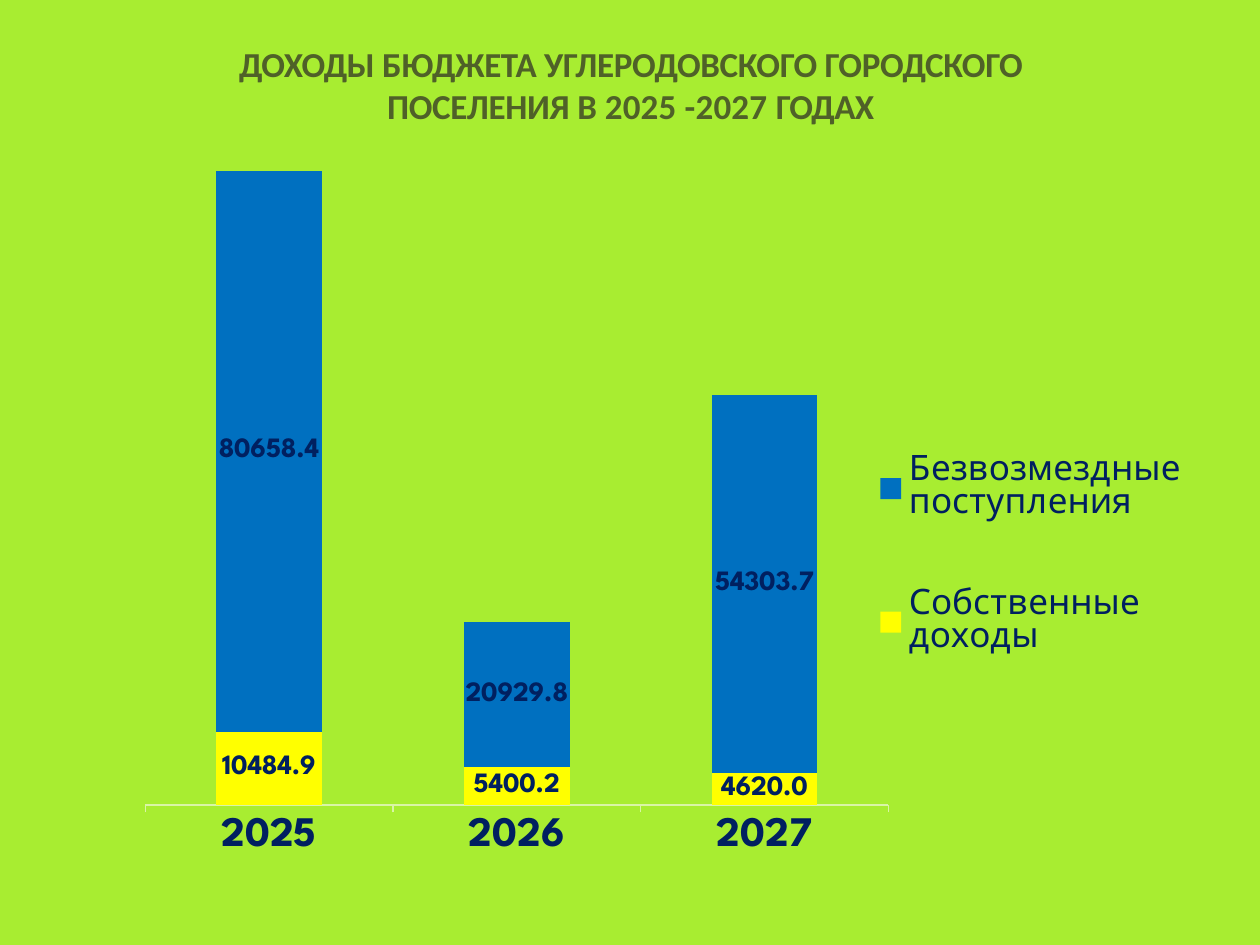
from lxml import etree
from pptx import Presentation
from pptx.chart.data import CategoryChartData
from pptx.dml.color import RGBColor
from pptx.enum.chart import XL_CHART_TYPE, XL_LEGEND_POSITION, XL_TICK_LABEL_POSITION, XL_TICK_MARK
from pptx.enum.shapes import MSO_SHAPE
from pptx.enum.text import MSO_AUTO_SIZE, PP_ALIGN
from pptx.oxml.ns import qn
from pptx.util import Inches, Pt

COLORS = {
    "back": "A8ED31",
    "title": "4F6128",
    "navy": "002060",
    "axis": "D9F5A6",
    "white": "FFFFFF",
    "own": "FFFF00",
    "grant": "0070C0",
}
TITLE = [
    ("ДОХОДЫ ", -30),
    ("БЮДЖЕТА УГЛЕРОДОВСКОГО ГОРОДСКОГО ПОСЕЛЕНИЯ ", -20),
    ("В ", 0),
    ("2025 -2027 ", 10),
    ("ГОДАХ", -40),
]
YEARS = ["2025", "2026", "2027"]
SERIES = [
    ("Собственные доходы", [10484.9, 5400.2, 4620.0], "own"),
    ("Безвозмездные поступления", [80658.4, 20929.8, 54303.7], "grant"),
]


def color(name):
    return RGBColor.from_string(COLORS[name])


def style(font, size, name, face="League Spartan", bold=False):
    font.size = Pt(size)
    font.name = face
    font.bold = bold
    font.color.rgb = color(name)


def place(parent, x, y, width, height, inner=False):
    old = parent.find(qn("c:layout"))
    if old is not None:
        parent.remove(old)
    layout = etree.Element(qn("c:layout"))
    manual = etree.SubElement(layout, qn("c:manualLayout"))
    parts = [("layoutTarget", "inner")] if inner else []
    parts += [("xMode", "edge"), ("yMode", "edge")]
    parts += [("x", x), ("y", y), ("w", width), ("h", height)]
    for tag, value in parts:
        etree.SubElement(manual, qn(f"c:{tag}")).set("val", str(value))
    return layout


def add_back(slide, left, top, width, height):
    back = slide.shapes.add_shape(MSO_SHAPE.RECTANGLE, left, top, width, height)
    back.shadow.inherit = False
    back.fill.solid()
    back.fill.fore_color.rgb = color("back")
    back.line.fill.background()


def add_title(slide, left, top, width, height):
    frame = slide.shapes.add_textbox(left, top, width, height).text_frame
    frame.word_wrap = True
    frame.auto_size = MSO_AUTO_SIZE.SHAPE_TO_FIT_TEXT
    frame.margin_left = frame.margin_right = frame.margin_bottom = 0
    frame.margin_top = Inches(0.01)
    line = frame.paragraphs[0]
    line.alignment = PP_ALIGN.CENTER
    for text, gap in TITLE:
        run = line.add_run()
        run.text = text
        style(run.font, 20, "title", "Calibri", True)
        run.font._element.set("spc", str(gap))


def add_bars(slide, left, top, width, height):
    data = CategoryChartData(number_format="0.0")
    data.categories = YEARS
    for name, values, _ in SERIES:
        data.add_series(name, values)
    chart = slide.shapes.add_chart(
        XL_CHART_TYPE.COLUMN_STACKED, left, top, width, height, data
    ).chart
    chart.has_title = False
    style(chart.font, 9.7, "white")

    years = chart.category_axis
    years.major_tick_mark = XL_TICK_MARK.OUTSIDE
    years.has_major_gridlines = False
    years.format.line.width = Pt(0.75)
    years.format.line.color.rgb = color("axis")
    years.tick_labels.offset = 0
    style(years.tick_labels.font, 24, "navy", bold=True)

    scale = chart.value_axis
    scale.minimum_scale = 0
    scale.maximum_scale = 91400
    scale.has_major_gridlines = False
    scale.tick_label_position = XL_TICK_LABEL_POSITION.NONE
    scale.visible = False

    plot = chart.plots[0]
    plot.gap_width = 134
    plot.overlap = 100
    plot.vary_by_categories = False
    for series, (_, _, name) in zip(plot.series, SERIES):
        series.format.fill.solid()
        series.format.fill.fore_color.rgb = color(name)
        labels = series.data_labels
        labels.show_value = True
        labels.number_format = "0.0"
        labels.number_format_is_linked = False
        style(labels.font, 16, "navy", bold=True)

    chart.has_legend = True
    legend = chart.legend
    legend.position = XL_LEGEND_POSITION.RIGHT
    legend.include_in_layout = False
    style(legend.font, 20, "navy")
    root = legend._element
    layout = place(root, 0.7, 0.34, 0.3, 0.45)
    root.find(qn("c:legendPos")).addnext(layout)
    area = chart._chartSpace.chart.plotArea
    area.insert(0, place(area, 0.046, 0.046, 0.675, 0.854, True))


def main():
    deck = Presentation()
    deck.slide_width = Inches(10)
    deck.slide_height = Inches(7.5)
    slide = deck.slides.add_slide(deck.slide_layouts[6])
    add_back(slide, 0, 0, deck.slide_width, deck.slide_height)
    add_title(slide, Inches(1.37), Inches(0.33), Inches(7.27), Inches(0.69))
    add_bars(slide, Inches(0.75), Inches(1.07), Inches(8.74), Inches(5.91))
    deck.save("out.pptx")


if __name__ == "__main__":
    main()
